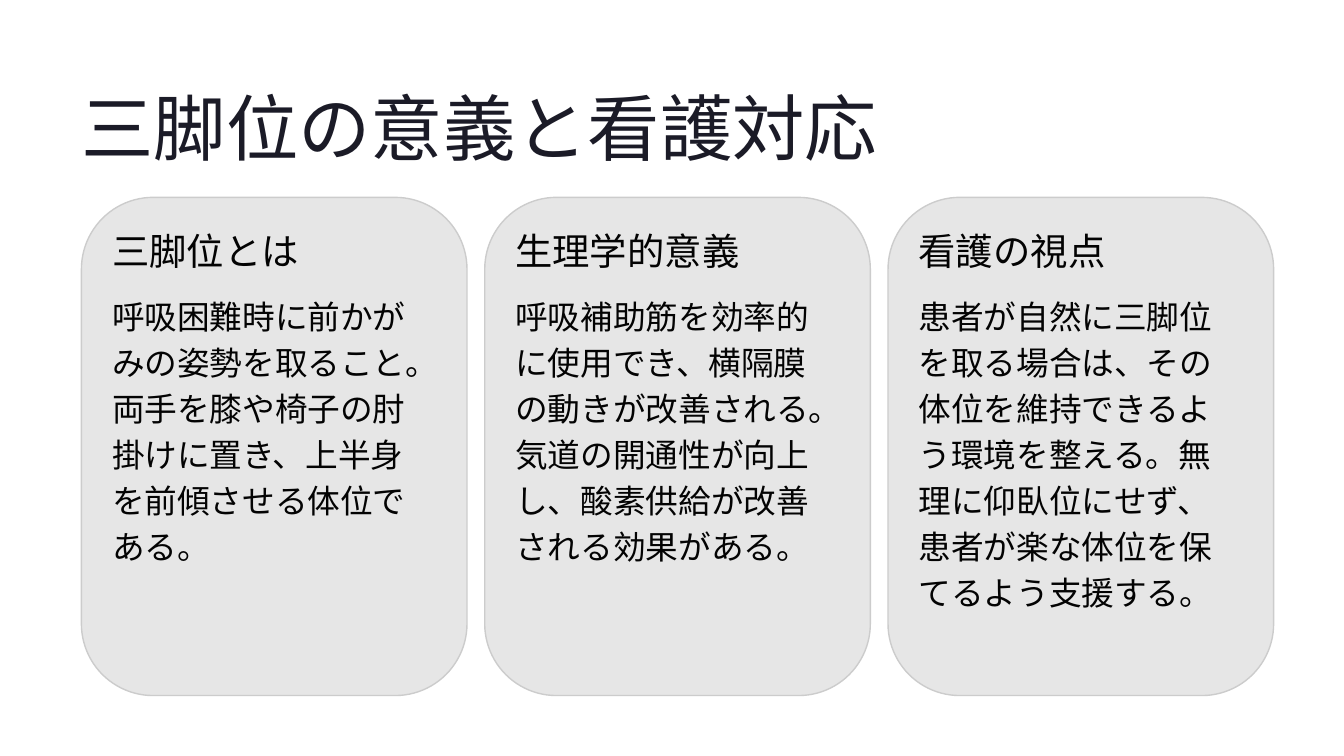
from dataclasses import dataclass

from pptx import Presentation
from pptx.dml.color import RGBColor
from pptx.enum.shapes import MSO_SHAPE
from pptx.enum.text import MSO_ANCHOR, MSO_AUTO_SIZE, PP_ALIGN
from pptx.slide import Slide
from pptx.text.text import TextFrame
from pptx.util import Pt

ROUND = MSO_SHAPE.ROUNDED_RECTANGLE
TOP = MSO_ANCHOR.TOP
LEFT = PP_ALIGN.LEFT
NO_FIT = MSO_AUTO_SIZE.NONE
TITLE_ONLY = 5

HEAD_FONT, BODY_FONT = "Inter", "Karla"
NAVY, BLACK, GREY, EDGE = "1B1B27", "030303", "E6E6E6", "CCCCCC"

MARGIN, CARD_TOP = 69.8, 169.2
CARD_W, CARD_H, STEP = 330.5, 427, 345.7
PAD = 26.2
TEXT_W = 277.2


@dataclass
class Card:
    head: str
    body: str


CARDS = [
    Card("三脚位とは",
         "呼吸困難時に前かがみの姿勢を取ること。両手を膝や椅子の肘掛けに置き、"
         "上半身を前傾させる体位である。"),
    Card("生理学的意義",
         "呼吸補助筋を効率的に使用でき、横隔膜の動きが改善される。"
         "気道の開通性が向上し、酸素供給が改善される効果がある。"),
    Card("看護の視点",
         "患者が自然に三脚位を取る場合は、その体位を維持できるよう環境を整える。"
         "無理に仰臥位にせず、患者が楽な体位を保てるよう支援する。"),
]


def color(code: str) -> RGBColor:
    return RGBColor.from_string(code)


def write(frame: TextFrame, text: str, *, size: float, lead: float,
          font: str = HEAD_FONT, ink: str = BLACK, wrap: bool = False) -> None:
    """Fill a frame with one paragraph; lead is the line height in points."""
    frame.margin_left = frame.margin_right = 0
    frame.margin_top = frame.margin_bottom = 0
    frame.auto_size = NO_FIT
    frame.word_wrap = wrap
    frame.vertical_anchor = TOP
    para = frame.paragraphs[0]
    para.alignment = LEFT
    para.line_spacing = Pt(lead)
    para.space_before = Pt(0)
    run = para.add_run()
    run.text = text
    run.font.name = font
    run.font.size = Pt(size)
    run.font.color.rgb = color(ink)


def add_title(slide: Slide, text: str) -> None:
    title = slide.shapes.title
    title.left, title.top = Pt(MARGIN), Pt(68.4)
    title.width, title.height = Pt(683.3), Pt(77.8)
    write(title.text_frame, text, size=62, lead=77.5, ink=NAVY)


def add_card(slide: Slide, card: Card, left: float) -> None:
    panel = slide.shapes.add_shape(
        ROUND, Pt(left), Pt(CARD_TOP), Pt(CARD_W), Pt(CARD_H))
    panel.adjustments[0] = 0.186
    panel.shadow.inherit = False
    panel.fill.solid()
    panel.fill.fore_color.rgb = color(GREY)
    panel.line.color.rgb = color(EDGE)
    panel.line.width = Pt(1.2)

    inner = Pt(left + PAD)
    head = slide.shapes.add_textbox(
        inner, Pt(CARD_TOP + PAD), Pt(TEXT_W), Pt(43.2))
    write(head.text_frame, card.head, size=32, lead=38.5)
    body = slide.shapes.add_textbox(
        inner, Pt(CARD_TOP + 79.2), Pt(TEXT_W), Pt(308.9))
    write(body.text_frame, card.body, size=28, lead=39.5,
          font=BODY_FONT, wrap=True)


def main() -> None:
    deck = Presentation()
    deck.slide_width, deck.slide_height = Pt(1152), Pt(648)
    slide = deck.slides.add_slide(deck.slide_layouts[TITLE_ONLY])
    add_title(slide, "三脚位の意義と看護対応")
    for i, card in enumerate(CARDS):
        add_card(slide, card, MARGIN + i * STEP)
    deck.save("out.pptx")


if __name__ == "__main__":
    main()
